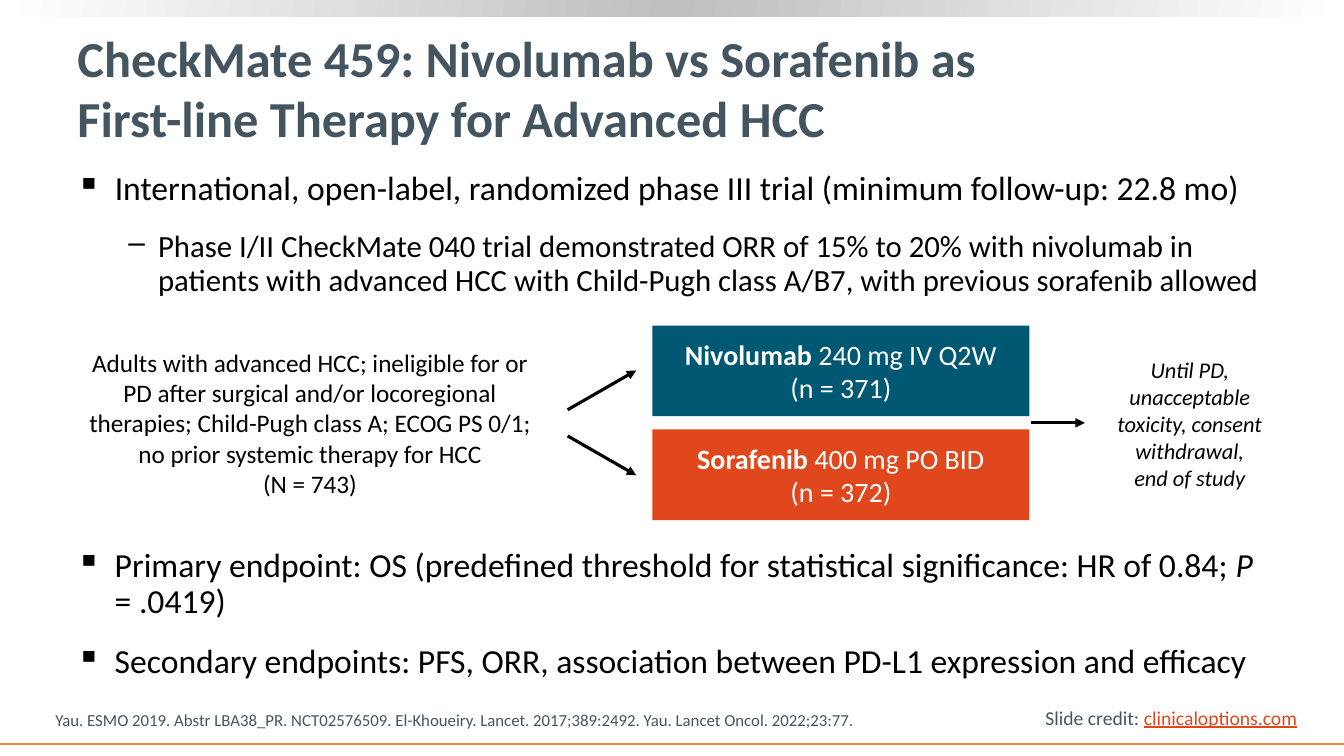
from copy import deepcopy

from pptx import Presentation
from pptx.dml.color import RGBColor
from pptx.enum.shapes import MSO_CONNECTOR as Connector, MSO_SHAPE as Shape
from pptx.enum.text import MSO_ANCHOR as Anchor, MSO_AUTO_SIZE as AutoSize, PP_ALIGN as Align
from pptx.oxml.ns import qn
from pptx.util import Inches, Pt

WIDTH, HEIGHT = 13.33, 7.5
BLACK, WHITE, SLATE = "000000", "FFFFFF", "455560"
TEAL, ORANGE, CORAL, SILVER = "015873", "E1471D", "F47D55", "BFBFBF"
# Bullet styles: character, text indent, hanging indent, size
SQUARE = ("▪", 0.38, 0.38, 24)
DASH = ("‒", 0.81, 0.31, 22)


def color(hex_string):
    return RGBColor.from_string(hex_string)


def write(paragraph, pieces, size, ink, align=Align.LEFT):
    """Fill a paragraph from (text, style) pieces; style letters: b, i, u."""
    paragraph.alignment = align
    for text, style in pieces:
        for number, line in enumerate(text.split("\n")):
            if number:
                paragraph.add_line_break()
            run = paragraph.add_run()
            run.text = line
            font = run.font
            font.name, font.size = "Calibri", Pt(size)
            font.color.rgb = color(ORANGE if "u" in style else ink)
            font.bold, font.italic, font.underline = (letter in style for letter in "biu")


def add_text(slide, box, pieces, size, ink, align=Align.LEFT, anchor=Anchor.TOP, wrap=True):
    frame = slide.shapes.add_textbox(*map(Inches, box)).text_frame
    frame.word_wrap = wrap
    frame.vertical_anchor = anchor
    frame.auto_size = AutoSize.NONE if wrap else AutoSize.SHAPE_TO_FIT_TEXT
    write(frame.paragraphs[0], pieces, size, ink, align)


def add_bullets(slide, box, items):
    frame = slide.shapes.add_textbox(*map(Inches, box)).text_frame
    frame.word_wrap = True
    for number, ((character, indent, hanging, size), pieces) in enumerate(items):
        paragraph = frame.add_paragraph() if number else frame.paragraphs[0]
        paragraph.line_spacing = 0.9
        paragraph.space_before = Pt(10 if number else 0)
        paragraph.space_after = Pt(7)
        properties = paragraph._p.get_or_add_pPr()
        properties.set("marL", str(Inches(indent)))
        properties.set("indent", str(-Inches(hanging)))
        bullet = properties.makeelement(qn("a:buChar"), {"char": character})
        properties.append(bullet)
        write(paragraph, pieces, size, BLACK)


def add_line(slide, start, end, ink, width, arrow=False):
    points = map(Inches, (*start, *end))
    connector = slide.shapes.add_connector(Connector.STRAIGHT, *points)
    connector.line.color.rgb = color(ink)
    connector.line.width = Pt(width)
    if arrow:
        line = connector.line._get_or_add_ln()
        line.append(line.makeelement(qn("a:tailEnd"), {"type": "triangle"}))
    properties = connector._element.spPr
    properties.append(properties.makeelement(qn("a:effectLst"), {}))


def add_rectangle(slide, box):
    shape = slide.shapes.add_shape(Shape.RECTANGLE, *map(Inches, box))
    shape.shadow.inherit = False
    shape.line.fill.background()
    return shape


def add_frame(slide, box):
    """Top gradient band and bottom rule."""
    left, top, width, height = box
    band = add_rectangle(slide, (left, top, width, 0.16))
    band.fill.gradient()
    band.fill.gradient_angle = 170
    stops = band.fill._fill._gradFill.gsLst
    stops.append(deepcopy(stops[0]))
    for stop, position, ink in zip(band.fill.gradient_stops, (0, 0.5, 1), (WHITE, SILVER, WHITE)):
        stop.position = position
        stop.color.rgb = color(ink)
    rule = top + height - 0.12
    add_line(slide, (left, rule), (left + width, rule), CORAL, 1.5)


def add_arm(slide, box, drug, dose, count, fill):
    shape = add_rectangle(slide, box)
    shape.fill.solid()
    shape.fill.fore_color.rgb = color(fill)
    frame = shape.text_frame
    frame.word_wrap = True
    frame.vertical_anchor = Anchor.MIDDLE
    write(frame.paragraphs[0], [(drug, "b"), (dose, "")], 20, WHITE, Align.CENTER)
    write(frame.add_paragraph(), [(count, "")], 20, WHITE, Align.CENTER)


def add_trial_design(slide, box):
    """Population, two treatment arms and stopping rule, left to right."""
    left, top, width, height = box
    middle = top + height / 2
    arm_left, arm_width, arm_height = left + 5.88, 3.74, 0.9
    arms = [("Nivolumab", " 240 mg IV Q2W", "(n = 371)", TEAL),
            ("Sorafenib", " 400 mg PO BID", "(n = 372)", ORANGE)]

    population = ("Adults with advanced HCC; ineligible for or\n"
                  "PD after surgical and/or locoregional therapies; "
                  "Child-Pugh class A; ECOG PS 0/1;\n"
                  "no prior systemic therapy for HCC\n(N = 743)")
    add_text(slide, (left, middle - 0.81, 4.97, 1.62), [(population, "")],
             18, BLACK, Align.CENTER, Anchor.MIDDLE)

    for number, arm in enumerate(arms):
        arm_top = top + number * (height - arm_height)
        add_arm(slide, (arm_left, arm_top, arm_width, arm_height), *arm)
        side = 2 * number - 1
        add_line(slide, (left + 5.04, middle + side * 0.13),
                 (left + 5.72, middle + side * 0.52), BLACK, 2.25, True)

    arm_right = arm_left + arm_width
    add_line(slide, (arm_right + 0.02, middle), (arm_right + 0.55, middle), BLACK, 2.25, True)
    stopping = "Until PD, unacceptable toxicity, consent withdrawal,\nend of study"
    add_text(slide, (left + width - 2.08, middle - 0.72, 2.08, 1.45), [(stopping, "i")],
             16, BLACK, Align.CENTER, Anchor.MIDDLE)


def add_footer(slide, box):
    left, top, width, height = box
    citation = ("Yau. ESMO 2019. Abstr LBA38_PR. NCT02576509. "
                "El-Khoueiry. Lancet. 2017;389:2492. Yau. Lancet Oncol. 2022;23:77.")
    add_text(slide, (left, top + 0.04, 8.59, 0.3), [(citation, "")],
             12, SLATE, anchor=Anchor.BOTTOM)
    add_text(slide, (left + width - 2.72, top, 2.72, height),
             [("Slide credit: ", ""), ("clinicaloptions.com", "u")], 14, SLATE, wrap=False)


def main():
    presentation = Presentation()
    presentation.slide_width, presentation.slide_height = Inches(WIDTH), Inches(HEIGHT)
    slide = presentation.slides.add_slide(presentation.slide_layouts[6])

    add_frame(slide, (0, 0, WIDTH, HEIGHT))
    title = "CheckMate 459: Nivolumab vs Sorafenib as\nFirst-line Therapy for Advanced HCC"
    add_text(slide, (0.67, 0.26, 11.89, 1.21), [(title, "b")], 36, SLATE, anchor=Anchor.MIDDLE)

    # Background above the trial design, endpoints below it
    add_bullets(slide, (0.66, 1.65, 12.08, 1.5), [
        (SQUARE, [("International, open-label, randomized phase III trial "
                   "(minimum follow-up: 22.8 mo)", "")]),
        (DASH, [("Phase I/II CheckMate 040 trial demonstrated ORR of 15% to 20% with nivolumab in "
                 "patients with advanced HCC with Child-Pugh class A/B7, "
                 "with previous sorafenib allowed", "")]),
    ])
    add_trial_design(slide, (0.59, 3.23, 12.25, 1.93))
    add_bullets(slide, (0.66, 5.39, 11.9, 1.63), [
        (SQUARE, [("Primary endpoint: OS (predefined threshold for statistical significance: "
                   "HR of 0.84; ", ""), ("P ", "i"), ("= .0419)", "")]),
        (SQUARE, [("Secondary endpoints: PFS, ORR, association between PD-L1 expression "
                   "and efficacy", "")]),
    ])
    add_footer(slide, (0.45, 6.95, 12.54, 0.34))
    presentation.save("out.pptx")


if __name__ == "__main__":
    main()
